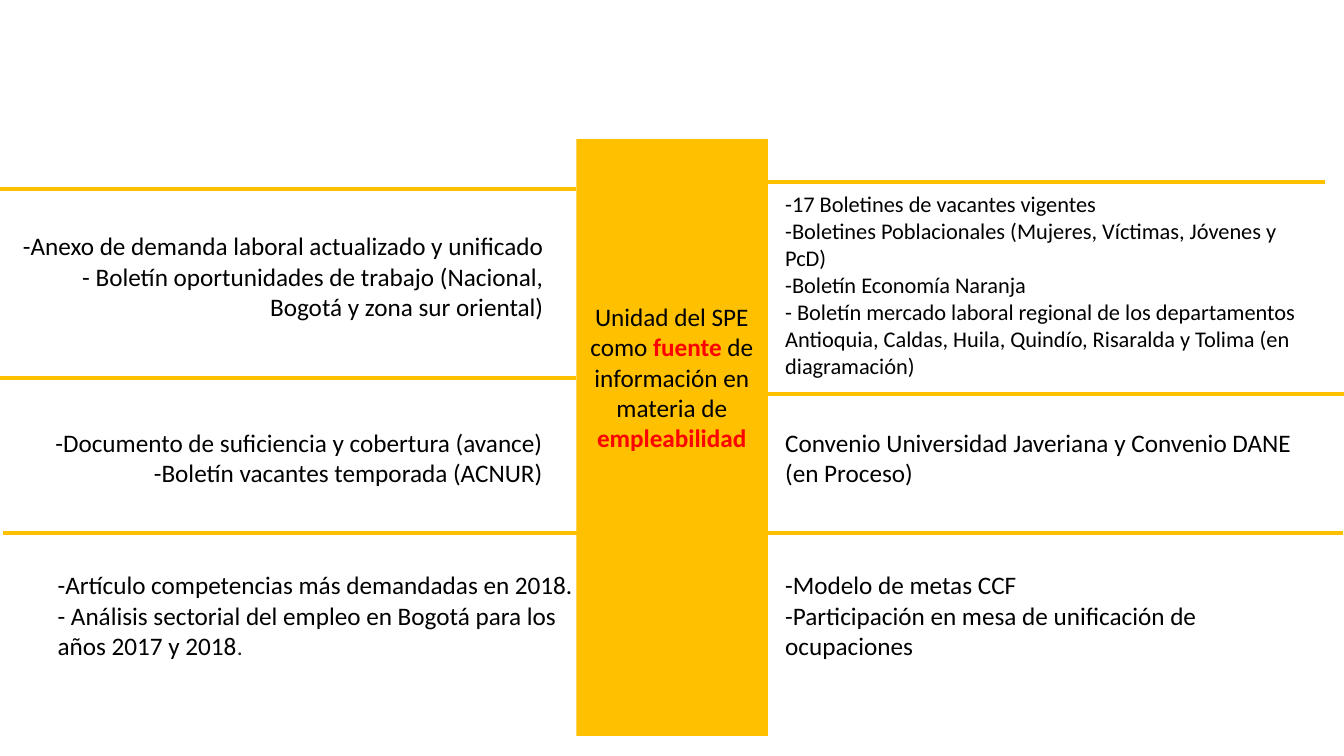
from dataclasses import dataclass

from lxml.etree import SubElement
from pptx import Presentation
from pptx.dml.color import RGBColor
from pptx.enum.shapes import MSO_CONNECTOR, MSO_SHAPE
from pptx.enum.text import MSO_AUTO_SIZE, PP_ALIGN
from pptx.oxml.ns import qn
from pptx.util import Pt


@dataclass(frozen=True)
class Theme:
    amber = RGBColor(0xFF, 0xC0, 0x00)
    text = RGBColor(0x00, 0x00, 0x00)
    accent = RGBColor(0xFF, 0x00, 0x00)
    soft = RGBColor(0x26, 0x26, 0x26)
    font = "Calibri"
    stop_font = "Roboto"
    body = 18
    small = 16


theme = Theme()


def add_text(left, top, width, height, paragraphs, align, size=theme.body, insets=(2.88, 1.44)):
    """Add a wrapped text box and return its text frame."""
    frame = slide.shapes.add_textbox(Pt(left), Pt(top), Pt(width), Pt(height)).text_frame
    frame.word_wrap = True
    frame.auto_size = MSO_AUTO_SIZE.SHAPE_TO_FIT_TEXT
    frame.margin_left = frame.margin_right = Pt(insets[0])
    frame.margin_top = frame.margin_bottom = Pt(insets[1])
    for index, text in enumerate(paragraphs):
        paragraph = frame.add_paragraph() if index else frame.paragraphs[0]
        paragraph.alignment = align
        paragraph.font.name = theme.font
        paragraph.font.size = Pt(size)
        paragraph.font.color.rgb = theme.text
        if text:
            paragraph.add_run().text = text
    return frame


presentation = Presentation()
presentation.slide_width, presentation.slide_height = Pt(960), Pt(540)
slide = presentation.slides.add_slide(presentation.slide_layouts[6])

# Central column
column = slide.shapes.add_shape(MSO_SHAPE.RECTANGLE, Pt(411.8), Pt(99.4), Pt(136.8), Pt(426.2))
column.shadow.inherit = False
column.fill.solid()
column.fill.fore_color.rgb = theme.amber
column.line.fill.background()

title = add_text(403.2, 211.7, 153.4, 116.6, [""], PP_ALIGN.CENTER, insets=(7.2, 3.6)).paragraphs[0]
for text, highlighted in [
    ("Unidad del SPE como ", False),
    ("fuente", True),
    (" de información en materia de ", False),
    ("empleabilidad", True),
]:
    run = title.add_run()
    run.text = text
    if highlighted:
        run.font.bold = True
        run.font.color.rgb = theme.accent

# Topics on both sides
middle_top, bottom_top = 303.8, 405.4
right_left, right_width = 558, 388.8

add_text(2.2, 163.4, 388.8, 68.4, [
    "-Anexo de demanda laboral actualizado y unificado",
    "- Boletín oportunidades de trabajo (Nacional, Bogotá y zona sur oriental)",
], PP_ALIGN.RIGHT)
add_text(19.4, middle_top, 371, 46.8, [
    "-Documento de suficiencia y cobertura (avance)",
    "-Boletín vacantes temporada (ACNUR)",
], PP_ALIGN.RIGHT)
articles = add_text(38.2, bottom_top, 399.6, 68.4, [
    "-Artículo competencias más demandadas en 2018.",
    "- Análisis sectorial del empleo en Bogotá para los años 2017 y 2018",
], PP_ALIGN.LEFT)
full_stop = articles.paragraphs[1].add_run()
full_stop.text = "."
full_stop.font.name = theme.stop_font
full_stop.font.color.rgb = theme.soft

add_text(right_left, 134.6, right_width, 118.8, [
    "-17 Boletines de vacantes vigentes",
    "-Boletines Poblacionales (Mujeres, Víctimas, Jóvenes y PcD)",
    "-Boletín Economía Naranja",
    "- Boletín mercado laboral regional de los departamentos Antioquia, Caldas, "
    "Huila, Quindío, Risaralda y Tolima (en diagramación)",
], PP_ALIGN.LEFT, theme.small)
add_text(right_left, middle_top, right_width, 46.8, [
    "Convenio Universidad Javeriana y Convenio DANE (en Proceso)",
], PP_ALIGN.LEFT)
add_text(right_left, bottom_top, right_width, 46.8, [
    "-Modelo de metas CCF",
    "-Participación en mesa de unificación de ocupaciones",
], PP_ALIGN.LEFT)

# Dividers: left end and height, all of one length
divider_length = 411.6
for left, top in [
    (0, 134.8), (0, 270), (2.2, 380.9),
    (535, 130.1), (548.2, 281.5), (547.6, 380.9),
]:
    divider = slide.shapes.add_connector(
        MSO_CONNECTOR.STRAIGHT, Pt(left + divider_length), Pt(top), Pt(left), Pt(top))
    divider.line.color.rgb = theme.amber
    divider.line.width = Pt(3)
    SubElement(divider._element.spPr, qn("a:effectLst"))

presentation.save("out.pptx")
